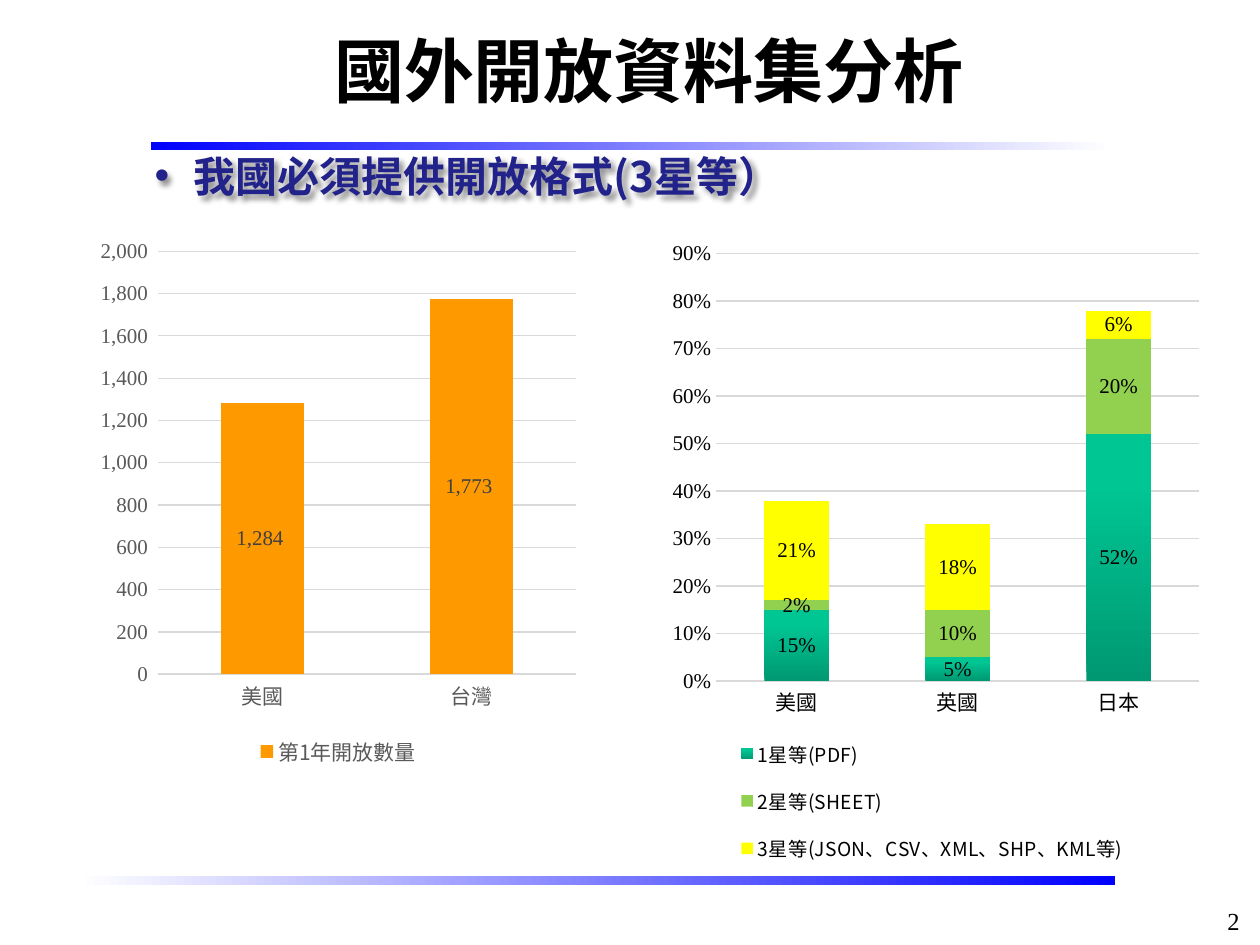
from lxml.etree import SubElement
from pptx import Presentation
from pptx.chart.data import CategoryChartData
from pptx.dml.color import RGBColor
from pptx.enum.chart import XL_CHART_TYPE, XL_LEGEND_POSITION, XL_TICK_MARK
from pptx.enum.shapes import MSO_SHAPE
from pptx.enum.text import MSO_ANCHOR, MSO_AUTO_SIZE, PP_ALIGN
from pptx.oxml import parse_xml
from pptx.oxml.ns import nsdecls, qn
from pptx.util import Cm, Pt


def color(hex_string):
    return RGBColor.from_string(hex_string)


def paint(fill, value, angle=0):
    """Fill with one hex string, or with a gradient of two (position, hex) stops."""
    if isinstance(value, str):
        fill.solid()
        fill.fore_color.rgb = color(value)
        return
    fill.gradient()
    fill.gradient_angle = angle
    for stop, (position, hex_string) in zip(fill.gradient_stops, value):
        stop.position = position
        stop.color.rgb = color(hex_string)


def place_layout(parent, before, box, inner=False):
    """Give a chart part a manual layout; box holds fractions of the chart."""
    for old in parent.findall(qn("c:layout")):
        parent.remove(old)
    layout = parse_xml(f"<c:layout {nsdecls('c')}><c:manualLayout/></c:layout>")
    settings = [("layoutTarget", "inner")] if inner else []
    settings += [("xMode", "edge"), ("yMode", "edge"), *zip("xywh", box)]
    for tag, value in settings:
        SubElement(layout[0], qn(f"c:{tag}")).set("val", str(value))
    parent.find(qn(before)).addprevious(layout)


class SlideBuilder:
    latin_font = "Times New Roman"
    chinese_font = "Noto Sans CJK SC"
    grid_color = "D9D9D9"

    def __init__(self, slide):
        self.slide = slide

    def style_font(self, font, name, size, hex_string, bold=False):
        font.name = name
        font.size = Pt(size)
        font.bold = bold
        font.color.rgb = color(hex_string)
        latin = font._element.find(qn("a:latin"))
        latin.addnext(parse_xml(f'<a:ea {nsdecls("a")} typeface="{name}"/>'))

    def bar(self, box, start, end):
        shape = self.slide.shapes.add_shape(MSO_SHAPE.RECTANGLE, *map(Cm, box))
        shape.shadow.inherit = False
        shape.line.fill.background()
        paint(shape.fill, [(0, start), (1, end)])

    def text(self, box, text, size, hex_string="000000", name=chinese_font,
             bold=True, align=PP_ALIGN.LEFT, anchor=MSO_ANCHOR.TOP):
        shape = self.slide.shapes.add_textbox(*map(Cm, box))
        text_frame = shape.text_frame
        text_frame.word_wrap = True
        text_frame.vertical_anchor = anchor
        text_frame.text = text
        paragraph = text_frame.paragraphs[0]
        paragraph.alignment = align
        self.style_font(paragraph.runs[0].font, name, size, hex_string, bold)
        return shape

    def shadowed_bullet(self, box, text, size, hex_string):
        shape = self.text(box, text, size, hex_string)
        shape.text_frame.auto_size = MSO_AUTO_SIZE.SHAPE_TO_FIT_TEXT
        properties = shape.text_frame.paragraphs[0]._p.get_or_add_pPr()
        properties.set("marL", str(Cm(0.79)))
        properties.set("indent", str(-Cm(0.79)))
        SubElement(properties, qn("a:buFont")).set("typeface", "Arial")
        SubElement(properties, qn("a:buChar")).set("char", "•")
        shape._element.spPr.append(parse_xml(
            f'<a:effectLst {nsdecls("a")}><a:outerShdw blurRad="38100" dist="38100" dir="2700000">'
            '<a:srgbClr val="000000"><a:alpha val="43000"/></a:srgbClr>'
            "</a:outerShdw></a:effectLst>"))

    def stacked_chart(self, box, categories, series, number_format, maximum, step,
                      text_color, label_color, axis_width, legend_size):
        """Add a stacked column chart; series holds (name, values, fill)."""
        data = CategoryChartData(number_format=number_format)
        data.categories = categories
        for name, values, _ in series:
            data.add_series(name, values)
        chart = self.slide.shapes.add_chart(
            XL_CHART_TYPE.COLUMN_STACKED, *map(Cm, box), data).chart
        chart.has_title = False
        self.style_font(chart.font, self.latin_font, 10, "000000")

        for axis, font_name in ((chart.category_axis, self.chinese_font),
                                (chart.value_axis, self.latin_font)):
            axis.major_tick_mark = axis.minor_tick_mark = XL_TICK_MARK.NONE
            self.style_font(axis.tick_labels.font, font_name, 12, text_color)
        value_axis = chart.value_axis
        value_axis.minimum_scale, value_axis.maximum_scale = 0, maximum
        value_axis.major_unit = step
        value_axis.tick_labels.number_format = number_format
        value_axis.tick_labels.number_format_is_linked = False
        value_axis.format.line.fill.background()
        for line, width in ((value_axis.major_gridlines.format.line, 0.75),
                            (chart.category_axis.format.line, axis_width)):
            line.color.rgb = color(self.grid_color)
            line.width = Pt(width)

        plot = chart.plots[0]
        plot.gap_width, plot.overlap = 150, 100
        plot.vary_by_categories = False
        for column, (_, _, fill) in zip(plot.series, series):
            paint(column.format.fill, fill, angle=90)
            labels = column.data_labels
            labels.show_value = True
            labels.number_format = number_format
            labels.number_format_is_linked = False
            self.style_font(labels.font, self.latin_font, 12, label_color)

        chart.has_legend = True
        chart.legend.position = XL_LEGEND_POSITION.BOTTOM
        chart.legend.include_in_layout = False
        self.style_font(chart.legend.font, self.chinese_font, legend_size, text_color)
        return chart


def main():
    presentation = Presentation()
    presentation.slide_width, presentation.slide_height = Cm(25.4), Cm(19.05)
    builder = SlideBuilder(presentation.slides.add_slide(presentation.slide_layouts[6]))

    builder.bar((1.57, 17.65, 20.9, 0.2), "FFFFFF", "0000FF")
    builder.bar((3.05, 2.87, 19.35, 0.15), "0000FF", "FFFFFF")
    builder.text((23.11, 18.14, 2.13, 0.61), "2", 14, name=builder.latin_font,
                 bold=False, align=PP_ALIGN.RIGHT)

    star_chart = builder.stacked_chart(
        (13.06, 4.72, 11.46, 13.06), ["美國", "英國", "日本"],
        [("1星等(PDF)", (0.15, 0.05, 0.52), [(0, "009872"), (0.8, "00C694")]),
         ("2星等(SHEET)", (0.02, 0.1, 0.2), "92D050"),
         ("3星等(JSON、CSV、XML、SHP、KML等)", (0.21, 0.18, 0.06), "FFFF00")],
        "0%", 0.9, 0.1, "000000", "000000", axis_width=0.75, legend_size=11)
    plot_area = star_chart._chartSpace.chart.plotArea
    place_layout(plot_area, "c:barChart", (0.12, 0.03, 0.85, 0.66), inner=True)
    place_layout(star_chart.legend._element, "c:overlay", (0.07, 0.75, 0.86, 0.25))

    builder.stacked_chart(
        (1.83, 4.62, 9.98, 10.95), ["美國", "台灣"],
        [("第1年開放數量", (1284, 1773), "FF9900")],
        r"#,##0_);[Red]\(#,##0\)", 2000, 200, "595959", "404040",
        axis_width=1, legend_size=12)

    builder.shadowed_bullet((2.87, 2.9, 18.31, 1.27), "我國必須提供開放格式(3星等）", 24, "22228B")
    builder.text((1.65, 0.33, 22.86, 2.16), "國外開放資料集分析", 40,
                 align=PP_ALIGN.CENTER, anchor=MSO_ANCHOR.MIDDLE)
    presentation.save("out.pptx")


if __name__ == "__main__":
    main()
